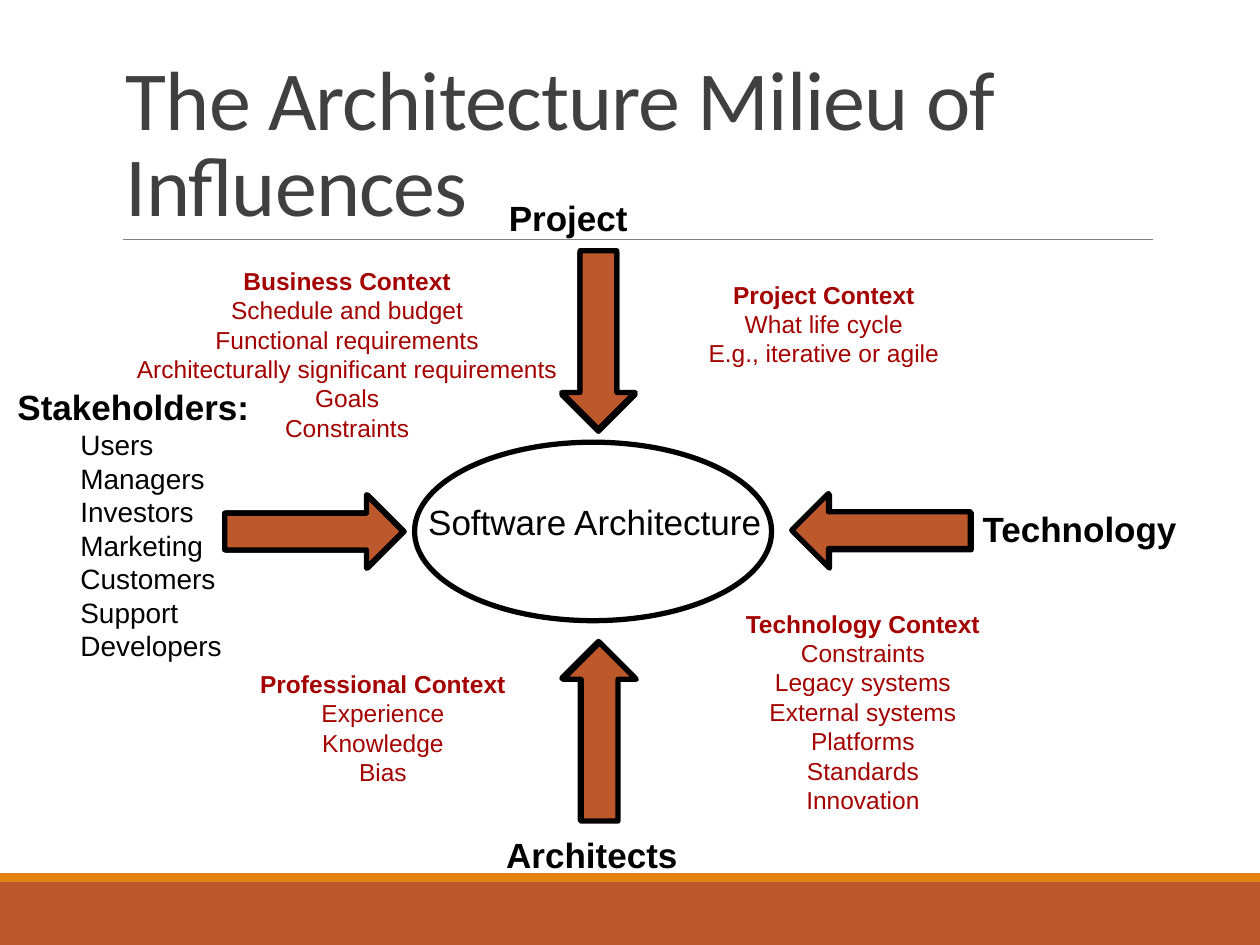
from dataclasses import dataclass

from pptx import Presentation
from pptx.dml.color import RGBColor
from pptx.enum import shapes, text
from pptx.oxml.ns import qn
from pptx.util import Pt
from lxml import etree

COLORS = {
    "rust": "BD582C", "orange": "E48312", "rule": "808080",
    "title": "404040", "black": "000000", "context": "A40000",
}
LEFT, CENTER = text.PP_ALIGN.LEFT, text.PP_ALIGN.CENTER
HEADING = {"size": Pt(20), "bold": True}
PLAIN = {"size": Pt(20), "bold": False}
ROLE = {"size": Pt(16), "bold": False}
CONTEXT_HEAD = {"size": Pt(14), "bold": True}
CONTEXT_ITEM = {"size": Pt(14), "bold": False}


@dataclass
class Label:
    box: tuple[float, float, float, float]
    heading: str
    items: tuple[str, ...] = ()
    head_format: dict = None
    item_format: dict = None
    color: str = "black"
    align: int = LEFT
    indent: float = 0
    wrap: bool = False


@dataclass
class Arrow:
    left: float
    top: float
    rotation: float
    filled: bool = True


def context(box: tuple, heading: str, *items: str, wrap: bool = False) -> Label:
    return Label(box, heading, items, CONTEXT_HEAD, CONTEXT_ITEM,
                 "context", CENTER, wrap=wrap)


def rgb(name: str) -> RGBColor:
    return RGBColor.from_string(COLORS[name])


def add_text(slide, box: tuple, settings: dict):
    frame = slide.shapes.add_textbox(*map(Pt, box)).text_frame
    for name, value in settings.items():
        setattr(frame, name, value)
    return frame


def add_run(paragraph, words: str, color: str, settings: dict):
    run = paragraph.add_run()
    run.text = words
    run.font.color.rgb = rgb(color)
    for name, value in settings.items():
        setattr(run.font, name, value)
    return run


def add_label(slide, label: Label) -> None:
    frame = add_text(slide, label.box, {
        "word_wrap": label.wrap,
        "auto_size": text.MSO_AUTO_SIZE.SHAPE_TO_FIT_TEXT,
    })
    for i, words in enumerate((label.heading, *label.items)):
        paragraph = frame.add_paragraph() if i else frame.paragraphs[0]
        paragraph.alignment = label.align
        if i and label.indent:
            paragraph.level = 1
            properties = paragraph._p.get_or_add_pPr()
            properties.set("marL", str(Pt(label.indent)))
            properties.set("indent", "0")
        settings = label.item_format if i else label.head_format
        add_run(paragraph, words, label.color, {"name": "Arial", **settings})


def add_figure(slide, kind, box: tuple, fill: str = None, outline: float = 0):
    figure = slide.shapes.add_shape(kind, *map(Pt, box))
    figure.shadow.inherit = False
    if fill:
        figure.fill.solid()
        figure.fill.fore_color.rgb = rgb(fill)
    else:
        figure.fill.background()
    if outline:
        figure.line.color.rgb = rgb("black")
        figure.line.width = Pt(outline)
    else:
        figure.line.fill.background()
    return figure


def add_arrow(slide, arrow: Arrow) -> None:
    figure = add_figure(slide, shapes.MSO_SHAPE.DOWN_ARROW,
                        (arrow.left, arrow.top, 42, 102),
                        "rust" if arrow.filled else None, 3)
    figure.rotation = arrow.rotation


LABELS = [
    Label((236.9, 282.2, 206, 31.5), "Software Architecture",
          head_format=PLAIN, align=CENTER),
    Label((2.9, 216.7, 148.3, 167), "Stakeholders:",
          ("Users", "Managers", "Investors", "Marketing", "Customers",
           "Support", "Developers"), HEADING, ROLE, indent=36),
    context((55.4, 148.3, 286, 108.7), "Business Context",
            "Schedule and budget", "Functional requirements",
            "Architecturally significant requirements", "Goals",
            "Constraints", wrap=True),
    Label((282.2, 472.5, 113, 31.5), "Architects", head_format=HEADING),
    context((141.1, 378.7, 155.5, 74.9), "Professional Context",
            "Experience", "Knowledge", "Bias"),
    Label((554.4, 286.7, 126.7, 31.5), "Technology", head_format=HEADING),
    context((419, 344.2, 148.3, 126), "Technology Context", "Constraints",
            "Legacy systems", "External systems", "Platforms", "Standards",
            "Innovation"),
    context((397.4, 156.2, 146.9, 58.3), "Project Context",
            "What life cycle", "E.g., iterative or agile"),
    Label((283.7, 108.7, 82.8, 31.5), "Project", head_format=HEADING),
]

# Outlines lie just off the filled arrows and thicken their edges
ARROWS = [
    Arrow(321, 144.5, 0, False), Arrow(321, 366.5, 180, False),
    Arrow(483, 252.7, 90, False), Arrow(159, 252.7, 270, False),
    Arrow(158.4, 252.7, 270), Arrow(321, 143.3, 0),
    Arrow(482.4, 252, 90), Arrow(321.6, 367.2, 180),
]


def main() -> None:
    deck = Presentation()
    deck.slide_width, deck.slide_height = Pt(720), Pt(540)
    slide = deck.slides.add_slide(deck.slide_layouts[6])

    # Footer bands
    for box, color in (((0, 504, 720, 36), "rust"), ((0, 499, 720, 5), "orange")):
        add_figure(slide, shapes.MSO_SHAPE.RECTANGLE, box, color)

    # Rule below the title
    rule = slide.shapes.add_connector(
        shapes.MSO_CONNECTOR.STRAIGHT, Pt(70.5), Pt(136.8), Pt(658.8), Pt(136.8))
    rule.line.color.rgb = rgb("rule")
    rule.line.width = Pt(0.5)
    etree.SubElement(rule._element.spPr, qn("a:effectLst"))

    # Title
    title = add_text(slide, (64.8, 22.3, 594, 114.5), {
        "word_wrap": True, "vertical_anchor": text.MSO_ANCHOR.BOTTOM})
    title.paragraphs[0].line_spacing = 0.85
    title_run = add_run(title.paragraphs[0], "The Architecture Milieu of Influences",
                        "title", {"name": "Calibri", "size": Pt(48)})
    title_run.font._element.set("spc", "-50")

    # Software architecture and its influences
    add_figure(slide, shapes.MSO_SHAPE.OVAL, (236.9, 252.7, 204, 102), outline=3)
    for label in LABELS:
        add_label(slide, label)
    for arrow in ARROWS:
        add_arrow(slide, arrow)

    deck.save("out.pptx")


if __name__ == "__main__":
    main()
